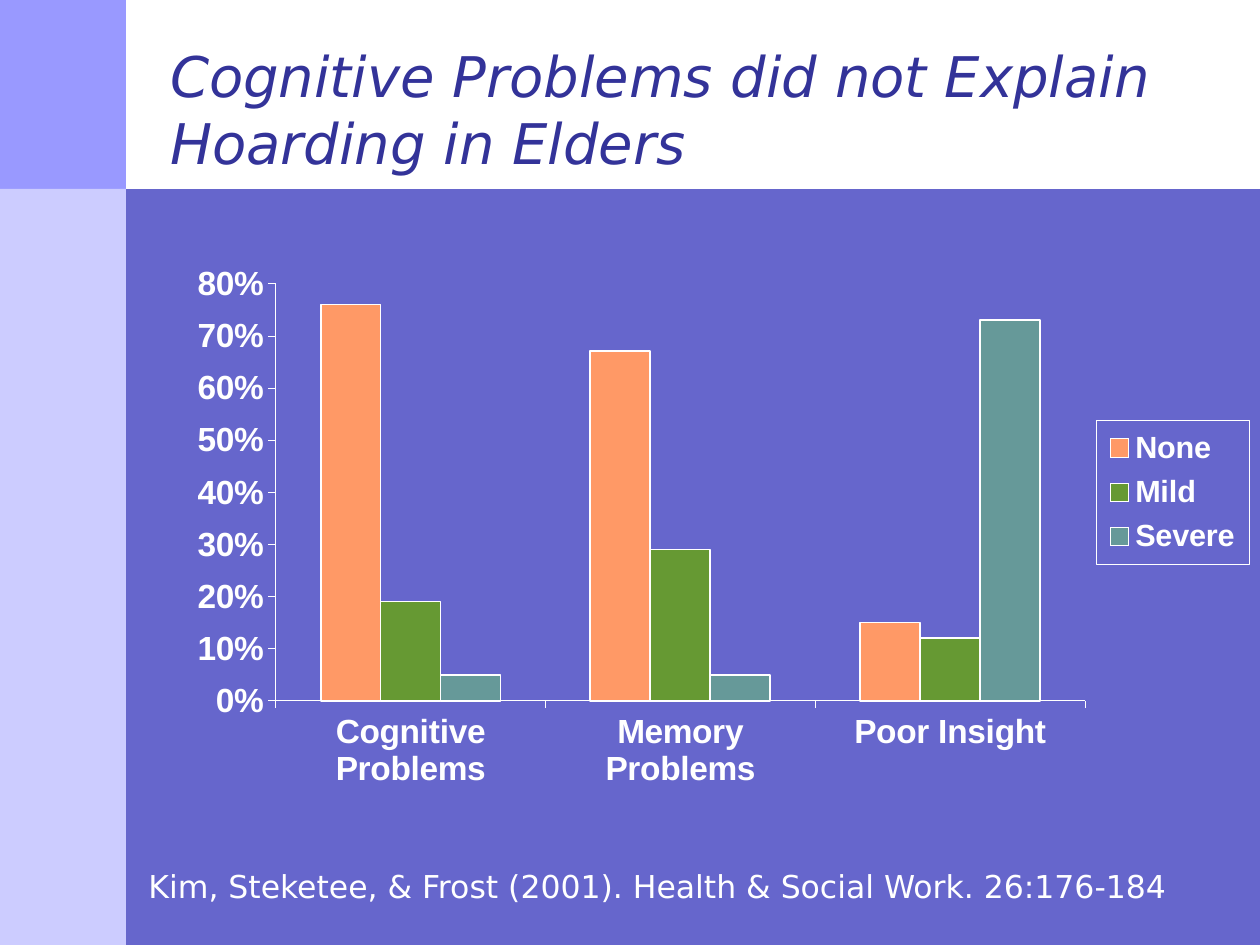
from lxml import etree
from pptx import Presentation
from pptx.chart.data import CategoryChartData
from pptx.dml.color import RGBColor
from pptx.enum.chart import XL_CHART_TYPE, XL_LEGEND_POSITION, XL_TICK_MARK
from pptx.enum.shapes import MSO_SHAPE
from pptx.enum.text import MSO_ANCHOR, MSO_AUTO_SIZE, PP_ALIGN
from pptx.oxml.ns import qn
from pptx.util import Pt

PX = 9144  # 100 px to the inch
COLUMN = XL_CHART_TYPE.COLUMN_CLUSTERED
RIGHT = XL_LEGEND_POSITION.RIGHT
OUT = XL_TICK_MARK.OUTSIDE
RECT = MSO_SHAPE.RECTANGLE
TOP = MSO_ANCHOR.TOP
LEFT = PP_ALIGN.LEFT
FIXED = MSO_AUTO_SIZE.NONE

COLORS = {
    "back": "6666CC", "white": "FFFFFF", "title": "333399",
    "corner": "9999FF", "side": "CCCCFF",
    "None": "FF9966", "Mild": "669933", "Severe": "669999",
}
LEVELS = {
    "None": (0.76, 0.67, 0.15),
    "Mild": (0.19, 0.29, 0.12),
    "Severe": (0.05, 0.05, 0.73),
}
GROUPS = ("Cognitive Problems", "Memory Problems", "Poor Insight")
TITLE = "Cognitive Problems did not Explain Hoarding in Elders"
SOURCE = "Kim, Steketee, & Frost (2001). Health & Social Work. 26:176-184"

TITLE_FONT = {"name": "DejaVu Sans", "size": Pt(32), "italic": True, "bold": False}
SOURCE_FONT = {"name": "DejaVu Sans", "size": Pt(18)}
AXIS_FONT = {"name": "Arial", "size": Pt(19.1), "bold": True}
KEY_FONT = {"name": "Arial", "size": Pt(17.5), "bold": True}


def rgb(key):
    return RGBColor.from_string(COLORS[key])


def emu(*box):
    return [n * PX for n in box]


def style(font, form, color):
    for key, value in form.items():
        setattr(font, key, value)
    font.color.rgb = rgb(color)


def outline(line, width):
    line.color.rgb = rgb("white")
    line.width = Pt(width)


def write(shape, text, form, color):
    frame = shape.text_frame
    frame.text = text
    frame.word_wrap = True
    frame.auto_size = FIXED
    frame.vertical_anchor = TOP
    par = frame.paragraphs[0]
    par.alignment = LEFT
    style(par.runs[0].font, form, color)
    return frame


def layout(parent, index, box, inner=False):
    """Fix the place of a chart part, in fractions of the chart."""
    old = parent.find(qn("c:layout"))
    if old is not None:
        parent.remove(old)
    node = etree.Element(qn("c:layout"))
    manual = etree.SubElement(node, qn("c:manualLayout"))
    values = {"layoutTarget": "inner"} if inner else {}
    values.update(xMode="edge", yMode="edge")
    values.update(zip("xywh", box))
    for key, value in values.items():
        etree.SubElement(manual, qn("c:" + key)).set("val", str(value))
    parent.insert(index, node)


def bands(slide, left, top, width, height):
    side, head = 100, 150
    for key, box in (
        ("white", (left, top, width, head)),
        ("corner", (left, top, side, head)),
        ("side", (left, top + head, side, height - head)),
    ):
        band = slide.shapes.add_shape(RECT, *emu(*box))
        band.shadow.inherit = False
        band.fill.solid()
        band.fill.fore_color.rgb = rgb(key)
        band.line.fill.background()


def heading(slide, *box):
    title = slide.shapes.title
    title.left, title.top, title.width, title.height = emu(*box)
    frame = write(title, TITLE, TITLE_FONT, "title")
    frame.margin_top = 8 * PX
    # Bring the title in front of the bands
    title.element.getparent().append(title.element)


def legend(chart):
    chart.has_legend = True
    chart.legend.position = RIGHT
    chart.legend.include_in_layout = False
    style(chart.legend.font, KEY_FONT, "white")
    node = chart.element.find(".//" + qn("c:legend"))
    layout(node, 1, (0.85, 0.3, 0.14, 0.24))
    # White frame
    frame = etree.Element(qn("c:spPr"))
    line = etree.SubElement(frame, qn("a:ln"), w=str(Pt(0.25)))
    fill = etree.SubElement(line, qn("a:solidFill"))
    etree.SubElement(fill, qn("a:srgbClr"), val=COLORS["white"])
    node.find(qn("c:txPr")).addprevious(frame)


def graph(slide, *box):
    data = CategoryChartData(number_format="0%")
    data.categories = GROUPS
    for name, values in LEVELS.items():
        data.add_series(name, values)
    chart = slide.shapes.add_chart(COLUMN, *emu(*box), data).chart
    chart.has_title = False
    style(chart.font, AXIS_FONT, "white")

    # Axes
    for axis in (chart.category_axis, chart.value_axis):
        axis.has_major_gridlines = False
        axis.major_tick_mark = OUT
        outline(axis.format.line, 0.25)
        style(axis.tick_labels.font, AXIS_FONT, "white")
    scale = chart.value_axis
    scale.minimum_scale, scale.maximum_scale, scale.major_unit = 0, 0.8, 0.1
    scale.tick_labels.number_format = "0%"
    scale.tick_labels.number_format_is_linked = False

    # Columns
    plot = chart.plots[0]
    plot.gap_width, plot.overlap = 150, 0
    plot.vary_by_categories = False
    for series in plot.series:
        series.format.fill.solid()
        series.format.fill.fore_color.rgb = rgb(series.name)
        outline(series.format.line, 1.06)

    legend(chart)
    area = chart.element.find(".//" + qn("c:plotArea"))
    layout(area, 0, (0.1, 0.07, 0.74, 0.7), inner=True)


def source(slide, *box):
    note = slide.shapes.add_textbox(*emu(*box))
    write(note, SOURCE, SOURCE_FONT, "white")


def main():
    deck = Presentation()
    deck.slide_width, deck.slide_height = emu(1000, 750)
    slide = deck.slides.add_slide(deck.slide_layouts[5])
    slide.background.fill.solid()
    slide.background.fill.fore_color.rgb = rgb("back")
    bands(slide, 0, 0, 1000, 750)
    heading(slide, 125, 25, 842, 142)
    graph(slide, 132, 192, 868, 473)
    source(slide, 108, 683, 892, 42)
    deck.save("out.pptx")


if __name__ == "__main__":
    main()
